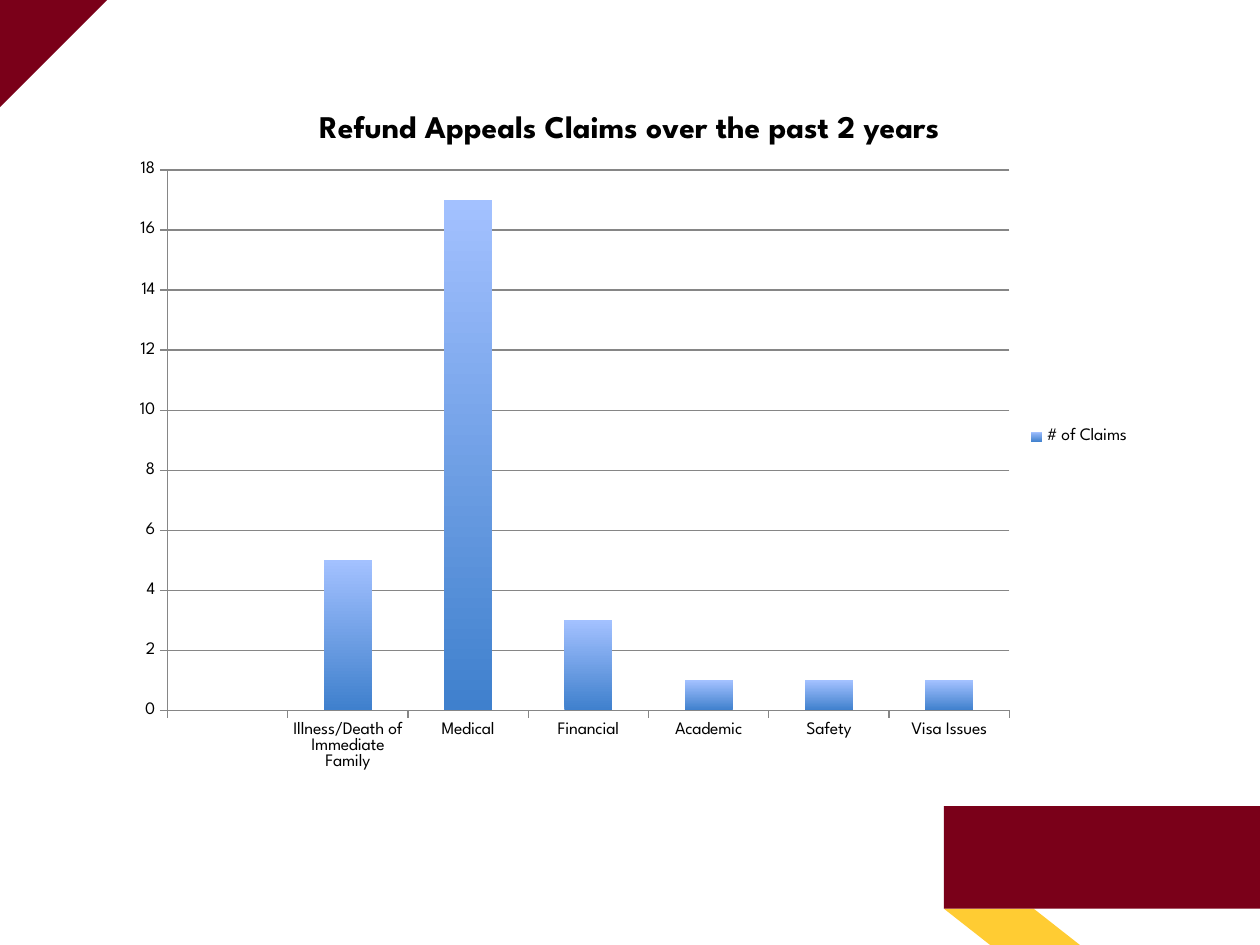
from lxml.etree import SubElement
from pptx import Presentation
from pptx.chart.data import CategoryChartData
from pptx.dml.color import RGBColor
from pptx.enum.chart import XL_CHART_TYPE, XL_LEGEND_POSITION, XL_TICK_MARK
from pptx.enum.shapes import MSO_SHAPE
from pptx.oxml.ns import qn
from pptx.util import Cm, Pt

FONT = "League Spartan"
MAROON, GOLD = "7A0019", "FFCC33"
BLACK, GRAY = "000000", "868686"
BAR_BOTTOM, BAR_TOP = "3F80CD", "A3C1FF"

CLAIMS = {
    "": None,
    "Illness/Death of Immediate Family": 5,
    "Medical": 17,
    "Financial": 3,
    "Academic": 1,
    "Safety": 1,
    "Visa Issues": 1,
}


def color(value):
    return RGBColor.from_string(value)


def format_font(font, size=10, bold=False, fill=BLACK):
    font.name = FONT
    font.size = Pt(size)
    font.bold = bold
    font.color.rgb = color(fill)


def write_text(text_frame, text, **text_format):
    paragraph = text_frame.paragraphs[0]
    run = paragraph.add_run()
    run.text = text
    format_font(run.font, **text_format)


def paint(shape, fill):
    shape.shadow.inherit = False
    shape.fill.solid()
    shape.fill.fore_color.rgb = color(fill)
    shape.line.fill.background()


def add_block(slide, kind, left, top, width, height, fill, rotation=0):
    shape = slide.shapes.add_shape(kind, Cm(left), Cm(top), Cm(width), Cm(height))
    shape.rotation = rotation
    paint(shape, fill)


def add_polygon(slide, points, fill):
    corners = [(Cm(x), Cm(y)) for x, y in points]
    builder = slide.shapes.build_freeform(*corners[0])
    builder.add_line_segments(corners[1:], close=True)
    paint(builder.convert_to_shape(), fill)


def format_axis(axis):
    axis.major_tick_mark = XL_TICK_MARK.OUTSIDE
    axis.minor_tick_mark = XL_TICK_MARK.NONE
    axis.format.line.color.rgb = color(GRAY)
    axis.format.line.width = Pt(0.75)
    format_font(axis.tick_labels.font)


def place_plot(chart, **fractions):
    """Fix the inner plot area, in fractions of the chart."""
    plot_area = chart.plots[0]._element.getparent()
    layout = plot_area.find(qn("c:layout"))
    if layout is None:
        layout = SubElement(plot_area, qn("c:layout"))
        plot_area.insert(0, layout)
    manual = SubElement(layout, qn("c:manualLayout"))
    settings = {"layoutTarget": "inner", "xMode": "edge", "yMode": "edge", **fractions}
    for name, value in settings.items():
        SubElement(manual, qn(f"c:{name}")).set("val", str(value))


def add_claims_chart(slide):
    data = CategoryChartData()
    data.categories = list(CLAIMS)
    data.add_series("# of Claims", list(CLAIMS.values()))
    chart = slide.shapes.add_chart(
        XL_CHART_TYPE.COLUMN_CLUSTERED, Cm(2.34), Cm(1.73), Cm(20.7), Cm(14.15), data
    ).chart
    format_font(chart.font)

    # Title and legend
    chart.has_title = True
    write_text(chart.chart_title.text_frame,
               "Refund Appeals Claims over the past 2 years", size=18, bold=True)
    chart.chart_title.include_in_layout = False
    chart.has_legend = True
    chart.legend.position = XL_LEGEND_POSITION.RIGHT
    chart.legend.include_in_layout = False
    format_font(chart.legend.font)

    # Axes
    format_axis(chart.category_axis)
    value_axis = chart.value_axis
    format_axis(value_axis)
    value_axis.minimum_scale = 0
    value_axis.maximum_scale = 18
    value_axis.major_unit = 2
    value_axis.has_major_gridlines = True
    gridline = value_axis.major_gridlines.format.line
    gridline.color.rgb = color(GRAY)
    gridline.width = Pt(0.75)

    # Columns
    plot = chart.plots[0]
    plot.gap_width = 150
    plot.vary_by_categories = False
    fill = plot.series[0].format.fill
    fill.gradient()
    fill.gradient_angle = 90
    for stop, value in zip(fill.gradient_stops, (BAR_BOTTOM, BAR_TOP)):
        stop.color.rgb = color(value)
    place_plot(chart, x=0.05, y=0.12, w=0.82, h=0.77)


def main():
    presentation = Presentation()
    presentation.slide_width = Cm(25.4)
    presentation.slide_height = Cm(19.05)
    slide = presentation.slides.add_slide(presentation.slide_layouts[6])

    # Corner decoration
    add_polygon(slide, [(19.03, 18.32), (20.84, 18.32), (21.77, 19.05), (19.96, 19.05)], GOLD)
    add_block(slide, MSO_SHAPE.RECTANGLE, 19.03, 16.25, 6.37, 2.07, MAROON)
    add_block(slide, MSO_SHAPE.RIGHT_TRIANGLE, 0, 0, 2.16, 2.16, MAROON, rotation=90)

    add_claims_chart(slide)
    presentation.save("out.pptx")


if __name__ == "__main__":
    main()
